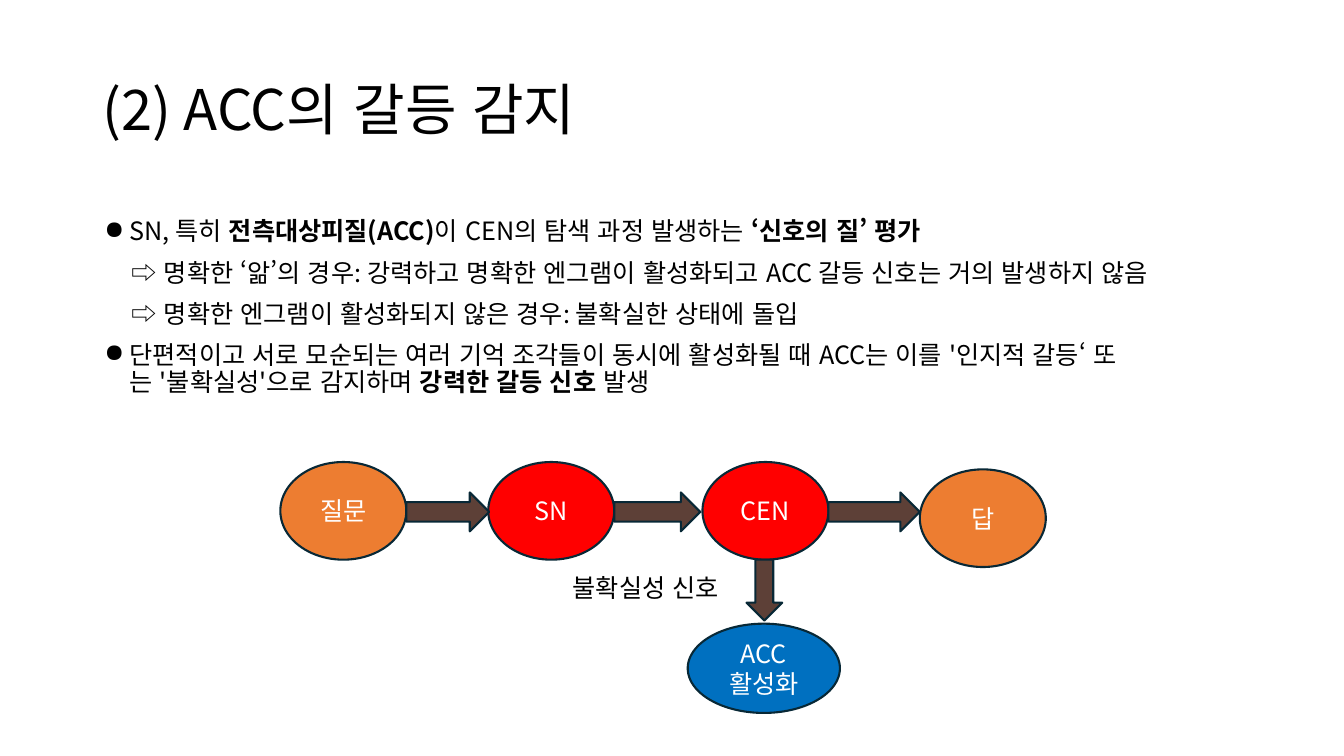
from collections import namedtuple
from lxml.etree import SubElement
from pptx import Presentation
from pptx.dml.color import RGBColor
from pptx.enum.lang import MSO_LANGUAGE_ID as Language
from pptx.enum.shapes import MSO_SHAPE as Shape
from pptx.enum.text import MSO_ANCHOR as Anchor, PP_ALIGN as Align
from pptx.oxml.ns import qn
from pptx.util import Pt

PX = 9525
FONT = "Noto Sans CJK KR"
COLORS = {
    "text": "000000",
    "light": "FFFFFF",
    "outline": "082836",
    "endpoint": "ED7D31",
    "network": "FF0000",
    "conflict": "0070C0",
    "arrow": "5D4037",
}
Box = namedtuple("Box", "left top width height")

SUB_INDENT = 26
BULLETS = [
    ("●", [
        ("SN, 특히 ", False),
        ("전측대상피질(ACC)", True),
        ("이 CEN의 탐색 과정 발생하는 ", False),
        ("‘신호의 질’ 평가", True),
    ]),
    (None, [("⇨ 명확한 ‘앎’의 경우: 강력하고 명확한 엔그램이 활성화되고 "
             "ACC 갈등 신호는 거의 발생하지 않음", False)]),
    (None, [("⇨ 명확한 엔그램이 활성화되지 않은 경우: 불확실한 상태에 돌입", False)]),
    ("●", [
        ("단편적이고 서로 모순되는 여러 기억 조각들이 동시에 활성화될 때 "
         "ACC는 이를 '인지적 갈등‘ 또는 '불확실성'으로 감지하며 ", False),
        ("강력한 갈등 신호", True),
        (" 발생", False),
    ]),
]

NODE_WIDTH, NODE_HEIGHT = 120, 93
NODES = [
    ("질문", 0, 0, "endpoint"),
    ("SN", 198, 0, "network"),
    ("CEN", 402, 0, "network"),
    ("답", 609, 7, "endpoint"),
]
ARROW_WIDTHS = [79, 82, 87]
ARROW_TOP, ARROW_HEIGHT = 29, 37


def color(name):
    return RGBColor.from_string(COLORS[name])


def emu(box):
    return [value * PX for value in box]


def add_span(para, text, size=18, bold=False, tone="text"):
    span = para.add_run()
    span.text = text
    font = span.font
    font.name, font.size, font.bold = FONT, Pt(size), bold
    font.color.rgb = color(tone)
    font.language_id = Language.KOREAN
    SubElement(font._element, qn("a:ea"), typeface=FONT)


def set_bullet(para, mark):
    properties = para._p.get_or_add_pPr()
    bullet_color = SubElement(properties, qn("a:buClr"))
    SubElement(bullet_color, qn("a:srgbClr"), val=COLORS["text"])
    SubElement(properties, qn("a:buChar"), char=mark)


def add_text_frame(page, box, anchor=Anchor.TOP):
    frame = page.shapes.add_textbox(*emu(box)).text_frame
    frame.word_wrap = True
    frame.vertical_anchor = anchor
    return frame


def add_figure(page, kind, box, fill):
    shape = page.shapes.add_shape(kind, *emu(box))
    shape.shadow.inherit = False
    shape.fill.solid()
    shape.fill.fore_color.rgb = color(fill)
    shape.line.color.rgb = color("outline")
    shape.line.width = Pt(1.5)
    return shape


def add_node(page, box, lines, fill):
    frame = add_figure(page, Shape.OVAL, box, fill).text_frame
    frame.vertical_anchor = Anchor.MIDDLE
    for index, line in enumerate(lines):
        para = frame.add_paragraph() if index else frame.paragraphs[0]
        para.alignment = Align.CENTER
        add_span(para, line, tone="light")


def add_title(page, box):
    para = add_text_frame(page, box, Anchor.MIDDLE).paragraphs[0]
    para.line_spacing = 0.9
    add_span(para, "(2) ACC의 갈등 감지", size=40)


def add_bullets(page, box):
    frame = add_text_frame(page, box)
    for index, (mark, spans) in enumerate(BULLETS):
        para = frame.add_paragraph() if index else frame.paragraphs[0]
        para.line_spacing = 0.9
        para.space_before = Pt(10 if index else 0)
        properties = para._p.get_or_add_pPr()
        margin, indent = (24, -24) if mark else (SUB_INDENT, 0)
        properties.set("marL", str(margin * PX))
        properties.set("indent", str(indent * PX))
        if mark:
            set_bullet(para, mark)
        for text, bold in spans:
            add_span(para, text, bold=bold)


def add_flow(page, box):
    def inside(left, top, width, height):
        return Box(box.left + left, box.top + top, width, height)

    for label, left, top, fill in NODES:
        add_node(page, inside(left, top, NODE_WIDTH, NODE_HEIGHT), [label], fill)
    add_node(page, inside(388, 154, 145, 85), ["ACC", "활성화"], "conflict")

    for (label, left, top, fill), width in zip(NODES, ARROW_WIDTHS):
        arrow_box = inside(left + NODE_WIDTH, ARROW_TOP, width, ARROW_HEIGHT)
        add_figure(page, Shape.RIGHT_ARROW, arrow_box, "arrow")
    add_figure(page, Shape.DOWN_ARROW, inside(444, NODE_HEIGHT, 34, 58), "arrow")

    caption = add_text_frame(page, inside(269, 100, 237, 38)).paragraphs[0]
    add_span(caption, "불확실성 신호")


def main():
    deck = Presentation()
    deck.slide_width, deck.slide_height = 1280 * PX, 720 * PX
    page = deck.slides.add_slide(deck.slide_layouts[6])
    add_title(page, Box(88, 38, 1104, 139))
    add_bullets(page, Box(90, 204, 1099, 207))
    add_flow(page, Box(267, 440, 729, 239))
    deck.save("out.pptx")


if __name__ == "__main__":
    main()
